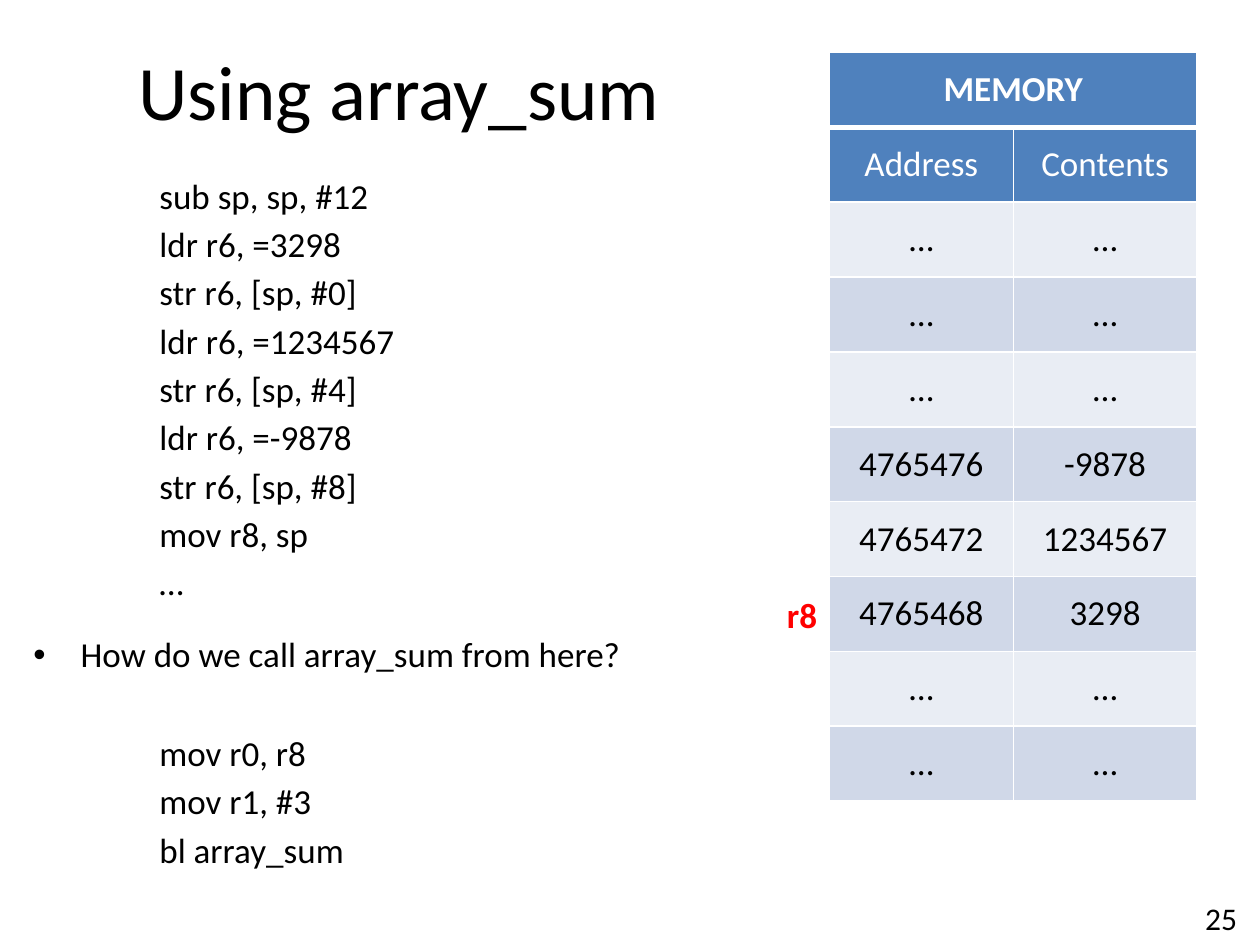
from dataclasses import dataclass

from lxml import etree
from pptx import Presentation
from pptx.dml.color import RGBColor
from pptx.enum.text import MSO_ANCHOR, PP_ALIGN
from pptx.oxml.ns import qn
from pptx.util import Inches, Length, Pt

LEFT, CENTER, RIGHT = PP_ALIGN.LEFT, PP_ALIGN.CENTER, PP_ALIGN.RIGHT
TOP, MIDDLE = MSO_ANCHOR.TOP, MSO_ANCHOR.MIDDLE


@dataclass(frozen=True)
class Theme:
    font: str = "Calibri"
    title: float = 44
    body: float = 20
    number: float = 18
    text: str = "000000"
    light: str = "FFFFFF"
    accent: str = "FF0000"
    header: str = "4F81BD"
    bands: tuple[str, str] = ("E9EDF4", "D0D8E8")
    rule: float = 1
    header_rule: float = 3


@dataclass(frozen=True)
class Box:
    """Place and size in grid units."""
    x: float
    y: float
    w: float
    h: float


@dataclass(frozen=True)
class Line:
    text: str
    before: float = 3.6
    bullet: bool = False


THEME = Theme()
UNITS_PER_INCH = 12  # the slide is a grid of 120 columns and 90 rows
CODE_INDENT = 12
BULLET_INDENT = 4.5

BODY = (
    *map(Line, (
        "sub sp, sp, #12",
        "ldr r6, =3298",
        "str r6, [sp, #0]",
        "ldr r6, =1234567",
        "str r6, [sp, #4]",
        "ldr r6, =-9878",
        "str r6, [sp, #8]",
        "mov r8, sp",
        "…",
    )),
    Line("How do we call array_sum from here?", before=17.3, bullet=True),
    Line("mov r0, r8", before=32.2),
    Line("mov r1, #3"),
    Line("bl array_sum"),
)

GAP = ("…", "…")
MEMORY = (
    ("MEMORY", ""),
    ("Address", "Contents"),
    GAP, GAP, GAP,
    ("4765476", "-9878"),
    ("4765472", "1234567"),
    ("4765468", "3298"),
    GAP, GAP,
)
HEADER_ROWS = 2
R8_ROW = 7
TABLE = Box(79, 5, 35, 71.3)
ROW_H = TABLE.h / len(MEMORY)


def grid(units: float) -> Length:
    return Inches(units / UNITS_PER_INCH)


def write(p, text: str, *, size: float = THEME.body, color: str = THEME.text,
          bold: bool = False, align=LEFT) -> None:
    p.alignment = align
    r = p.add_run()
    r.text = text
    r.font.name, r.font.size, r.font.bold = THEME.font, Pt(size), bold
    r.font.color.rgb = RGBColor.from_string(color)


def add_box(slide, box: Box, anchor=MIDDLE):
    sp = slide.shapes.add_textbox(*map(grid, (box.x, box.y, box.w, box.h)))
    tf = sp.text_frame
    tf.word_wrap = True
    tf.vertical_anchor = anchor
    return tf


def add_body(slide, box: Box, lines: tuple[Line, ...]) -> None:
    tf = add_box(slide, box, TOP)
    for i, line in enumerate(lines):
        p = tf.add_paragraph() if i else tf.paragraphs[0]
        p.space_before = Pt(line.before)
        pPr = p._p.get_or_add_pPr()
        pPr.set("marL", str(grid(BULLET_INDENT if line.bullet else CODE_INDENT)))
        if line.bullet:
            pPr.set("indent", str(-grid(BULLET_INDENT)))
            etree.SubElement(pPr, qn("a:buFont"), typeface="Arial")
            etree.SubElement(pPr, qn("a:buChar"), char="•")
        write(p, line.text)


def set_borders(cell, **widths: float) -> None:
    tcPr = cell._tc.get_or_add_tcPr()
    for side in "LRTB":
        ln = etree.SubElement(tcPr, qn(f"a:ln{side}"),
                              w=str(Pt(widths.get(side, THEME.rule))))
        fill = etree.SubElement(ln, qn("a:solidFill"))
        etree.SubElement(fill, qn("a:srgbClr"), val=THEME.light)


def add_memory(slide) -> None:
    cols = len(MEMORY[0])
    table = slide.shapes.add_table(
        len(MEMORY), cols, *map(grid, (TABLE.x, TABLE.y, TABLE.w, TABLE.h))).table
    table.first_row = table.horz_banding = False
    for col in table.columns:
        col.width = grid(TABLE.w / cols)
    for i, values in enumerate(MEMORY):
        table.rows[i].height = grid(ROW_H)
        is_header = i < HEADER_ROWS
        rules = {0: {"B": THEME.header_rule}, 1: {"T": THEME.header_rule}}.get(i, {})
        for cell, value in zip(table.rows[i].cells, values):
            set_borders(cell, **rules)
            cell.fill.solid()
            cell.fill.fore_color.rgb = RGBColor.from_string(
                THEME.header if is_header else THEME.bands[i % 2])
            cell.vertical_anchor = MIDDLE
            if value:
                write(cell.text_frame.paragraphs[0], value, align=CENTER, bold=i == 0,
                      color=THEME.light if is_header else THEME.text)
    table.cell(0, 0).merge(table.cell(0, cols - 1))


def main() -> None:
    prs = Presentation()
    prs.slide_width, prs.slide_height = grid(120), grid(90)
    slide = prs.slides.add_slide(prs.slide_layouts[6])

    # Title and code
    title = add_box(slide, Box(6, 1, 64, 15))
    write(title.paragraphs[0], "Using array_sum", size=THEME.title, align=CENTER)
    add_body(slide, Box(2, 16, 74, 66), BODY)

    # Slide number
    number = add_box(slide, Box(91, 85, 28, 4.8))
    write(number.paragraphs[0], "25", size=THEME.number, align=RIGHT)

    # Memory table, with the register label beside its row
    add_memory(slide)
    label_w = 5.3
    label = add_box(slide, Box(TABLE.x - label_w, TABLE.y + R8_ROW * ROW_H, label_w, ROW_H))
    write(label.paragraphs[0], "r8", color=THEME.accent, bold=True, align=RIGHT)

    prs.save("out.pptx")


if __name__ == "__main__":
    main()
